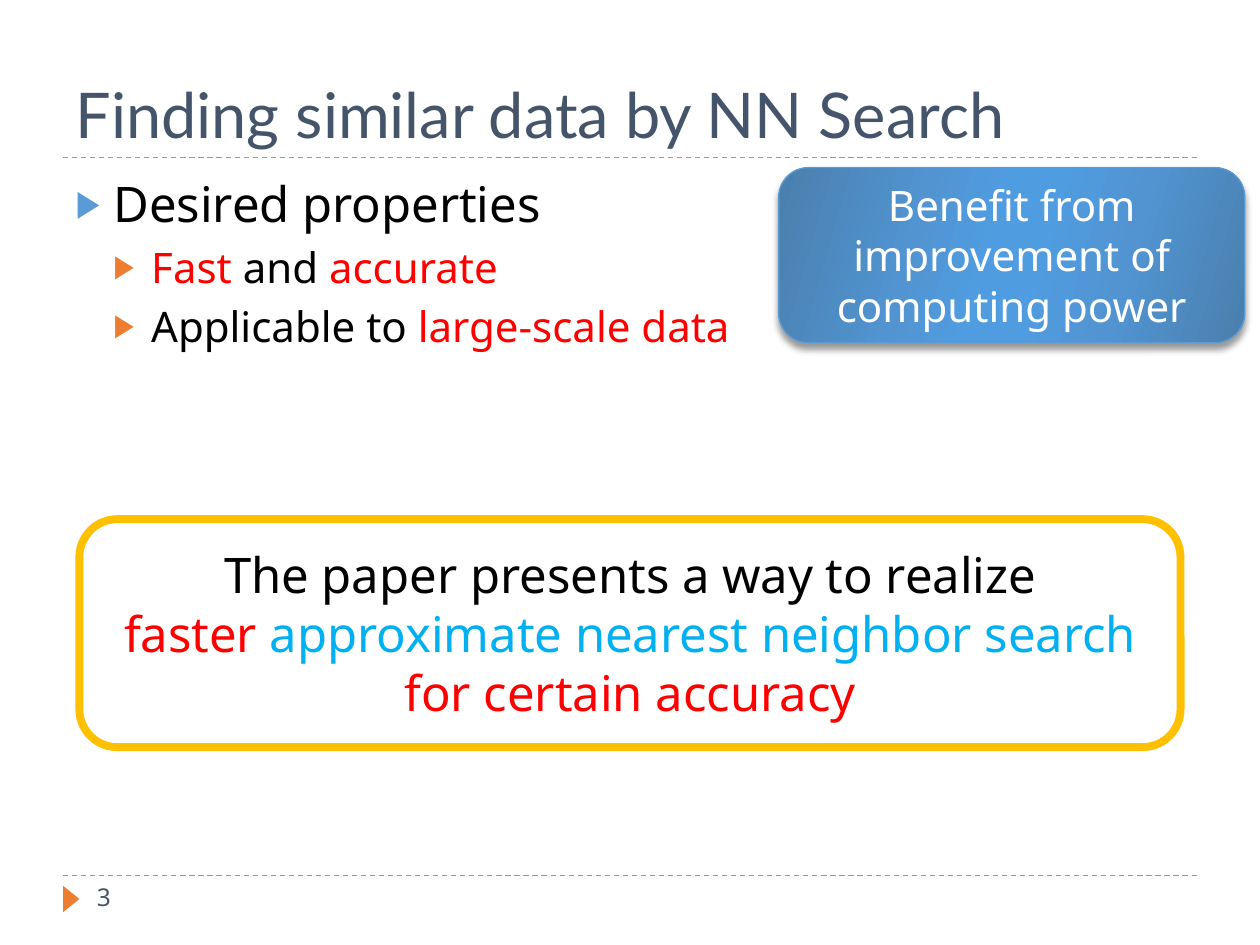
from lxml.etree import SubElement
from pptx import Presentation
from pptx.dml.color import RGBColor
from pptx.enum.dml import MSO_LINE
from pptx.enum.shapes import MSO_CONNECTOR, MSO_SHAPE
from pptx.enum.text import MSO_ANCHOR, PP_ALIGN
from pptx.oxml.ns import qn
from pptx.util import Inches, Pt

BLACK = RGBColor(0x00, 0x00, 0x00)
WHITE = RGBColor(0xFF, 0xFF, 0xFF)
RED = RGBColor(0xFF, 0x00, 0x00)
SKY = RGBColor(0x00, 0xB0, 0xF0)
SLATE = RGBColor(0x44, 0x54, 0x6A)
BLUE = RGBColor(0x5B, 0x9B, 0xD5)
ORANGE = RGBColor(0xED, 0x7D, 0x31)
GOLD = RGBColor(0xFF, 0xC0, 0x00)
EDGE_BLUE = RGBColor(0x4A, 0x7F, 0xAE)
MID_BLUE = RGBColor(0x51, 0x94, 0xD1)
CORE_BLUE = RGBColor(0x50, 0x9C, 0xE0)
SHEEN = [(0, EDGE_BLUE), (30, MID_BLUE), (45, CORE_BLUE),
         (55, CORE_BLUE), (73, MID_BLUE), (100, EDGE_BLUE)]

LEVELS = [(28, 6, BLUE), (24, 5, ORANGE)]
PROPERTIES = [
    (0, [("Desired properties", BLACK)]),
    (1, [("Fast", RED), (" and ", BLACK), ("accurate", RED)]),
    (1, [("Applicable to ", BLACK), ("large-scale data", RED)]),
]
CLAIM = [
    ("The paper presents a way to realize\n", BLACK),
    ("faster ", RED),
    ("approximate nearest neighbor search ", SKY),
    ("for certain accuracy", RED),
]


class SlideBuilder:
    heading_font = "Lato"
    body_font = "Noto Sans"

    def __init__(self, slide):
        self.slide = slide
        self.shapes = slide.shapes

    def place(self, shape, left, top, width, height):
        shape.left, shape.top = Inches(left), Inches(top)
        shape.width, shape.height = Inches(width), Inches(height)

    def add_runs(self, paragraph, runs, size, font=None, align=PP_ALIGN.LEFT):
        paragraph.alignment = align
        paragraph.font.size = Pt(size)
        paragraph.font.name = font or self.body_font
        for text, color in runs:
            run = paragraph.add_run()
            run.text = text.rstrip("\n")
            run.font.color.rgb = color
            if text.endswith("\n"):
                paragraph.add_line_break()

    def title(self, text):
        heading = self.shapes.title
        self.place(heading, 0.5, 0.17, 9, 1.08)
        heading.text_frame.vertical_anchor = MSO_ANCHOR.BOTTOM
        self.add_runs(heading.text_frame.paragraphs[0], [(text, SLATE)], 36, self.heading_font)

    def bullets(self, items):
        body = self.slide.placeholders[1]
        self.place(body, 0.5, 1.33, 9, 5.4)
        frame = body.text_frame
        for index, (level, runs) in enumerate(items):
            item = frame.add_paragraph() if index else frame.paragraphs[0]
            size, gap, marker_color = LEVELS[level]
            item.level = level
            item.space_before = Pt(gap)
            self.add_runs(item, runs, size)
            self.marker(item, level, marker_color)

    def marker(self, paragraph, level, color):
        properties = paragraph._p.get_or_add_pPr()
        properties.set("marL", str(Inches(0.3 * (level + 1))))
        properties.set("indent", str(Inches(-0.3)))
        following = properties.find(qn("a:defRPr"))
        bullet = [SubElement(properties, qn(tag)) for tag in ("a:buClr", "a:buSzPct", "a:buChar")]
        SubElement(bullet[0], qn("a:srgbClr")).set("val", str(color))
        bullet[1].set("val", "76000")
        bullet[2].set("char", "▶")
        if following is not None:
            properties.append(following)

    def rule(self, y):
        divider = self.shapes.add_connector(
            MSO_CONNECTOR.STRAIGHT, Inches(0.5), Inches(y), Inches(9.5), Inches(y))
        divider.line.color.rgb = ORANGE
        divider.line.width = Pt(0.75)
        divider.line.dash_style = MSO_LINE.DASH
        SubElement(divider._element.spPr, qn("a:effectLst"))

    def page_number(self, number):
        pointer = self.shapes.add_shape(
            MSO_SHAPE.ISOSCELES_TRIANGLE, Inches(0.46), Inches(7.07), Inches(0.21), Inches(0.13))
        pointer.rotation = 90
        pointer.shadow.inherit = False
        pointer.fill.solid()
        pointer.fill.fore_color.rgb = ORANGE
        pointer.line.fill.background()
        label = self.shapes.add_textbox(Inches(0.67), Inches(6.95), Inches(2.17), Inches(0.4))
        label.text_frame.word_wrap = True
        self.add_runs(label.text_frame.paragraphs[0], [(number, SLATE)], 14)

    def box(self, preset, bounds, runs, size, line_color, line_width):
        panel = self.shapes.add_shape(preset, *(Inches(length) for length in bounds))
        panel.shadow.inherit = False
        panel.fill.solid()
        panel.fill.fore_color.rgb = WHITE
        panel.line.color.rgb = line_color
        panel.line.width = Pt(line_width)
        frame = panel.text_frame
        frame.word_wrap = True
        frame.vertical_anchor = MSO_ANCHOR.MIDDLE
        self.add_runs(frame.paragraphs[0], runs, size, align=PP_ALIGN.CENTER)
        return panel

    def callout(self, bounds, text):
        bubble = self.box(MSO_SHAPE.ROUNDED_RECTANGULAR_CALLOUT, bounds,
                          [(text, WHITE)], 24, BLUE, 0.75)
        for index, value in enumerate((-0.5, 0.17, 0.17)):
            bubble.adjustments[index] = value
        self.sheen(bubble)
        self.drop_shadow(bubble)

    def sheen(self, shape):
        shape.fill.gradient()
        shape.fill.gradient_angle = 344
        stops = shape._element.spPr.find(qn("a:gradFill")).find(qn("a:gsLst"))
        for stop in list(stops):
            stops.remove(stop)
        for position, color in SHEEN:
            stop = SubElement(stops, qn("a:gs"))
            stop.set("pos", str(position * 1000))
            SubElement(stop, qn("a:srgbClr")).set("val", str(color))

    def drop_shadow(self, shape):
        effects = shape._element.spPr.find(qn("a:effectLst"))
        shadow = SubElement(effects, qn("a:outerShdw"))
        shadow.set("blurRad", str(Pt(4)))
        shadow.set("dist", str(Pt(3.4)))
        shadow.set("dir", str(90 * 60000))
        shadow.set("rotWithShape", "0")
        color = SubElement(shadow, qn("a:srgbClr"))
        color.set("val", str(BLACK))
        SubElement(color, qn("a:alpha")).set("val", "40000")


def main():
    deck = Presentation()
    deck.slide_width, deck.slide_height = Inches(10), Inches(7.5)
    builder = SlideBuilder(deck.slides.add_slide(deck.slide_layouts[1]))
    for y in (6.95, 1.25):
        builder.rule(y)
    builder.title("Finding similar data by NN Search")
    builder.bullets(PROPERTIES)
    builder.page_number("3")
    builder.box(MSO_SHAPE.ROUNDED_RECTANGLE, (0.63, 4.12, 8.74, 1.81), CLAIM, 28, GOLD, 4.5)
    builder.callout((6.18, 1.33, 3.7, 1.39), "Benefit from improvement of computing power")
    deck.save("out.pptx")


if __name__ == "__main__":
    main()
